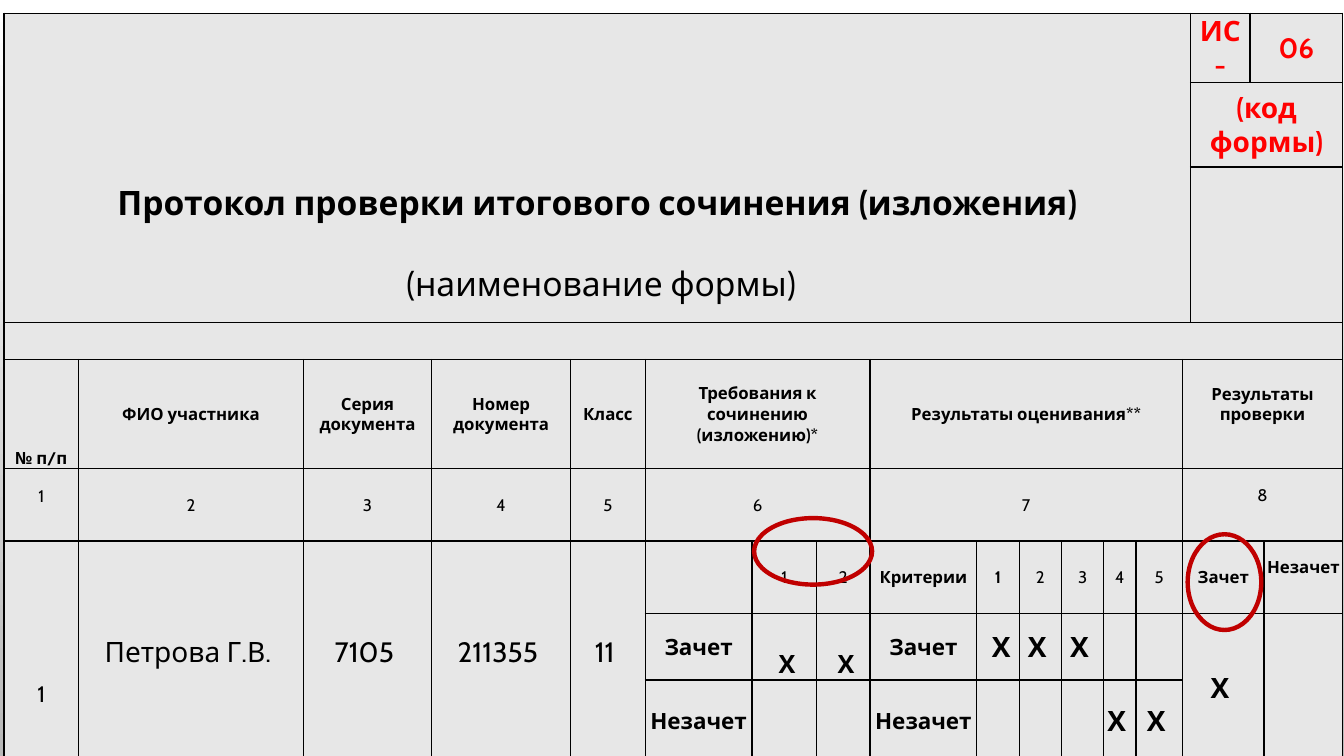
"""Build the essay marking protocol slide."""
from dataclasses import dataclass

from lxml.etree import SubElement
from pptx import Presentation
from pptx.dml.color import RGBColor
from pptx.enum.shapes import MSO_SHAPE
from pptx.enum.text import MSO_ANCHOR, PP_ALIGN
from pptx.oxml.ns import qn
from pptx.slide import Slide
from pptx.table import Table
from pptx.util import Inches, Pt

COLORS = {"text": "000000", "code": "FF0000", "fill": "E7E7E7",
          "ring": "C00000", "light": "FFFFFF", "dark": "B9B9B9"}
FONT = "Cabin"
COLS = [0.74, 2.23, 1.27, 1.38, 0.74, 1.06, 0.64, 0.53, 1.06,
        0.42, 0.42, 0.42, 0.32, 0.46, 0.08, 0.59, 0.14, 0.78]
ROWS = [0.67, 0.84, 1.54, 0.37, 1.08, 0.72, 0.72, 0.66, 0.82]
TOP, MID, LOW = MSO_ANCHOR.TOP, MSO_ANCHOR.MIDDLE, MSO_ANCHOR.BOTTOM


@dataclass
class Entry:
    row: int
    col: int
    text: str = ""
    size: float = 12
    bold: bool = False
    rows: int = 1
    cols: int = 1
    anchor: MSO_ANCHOR = MID
    color: str = "text"
    above: float = 0.01
    below: float = 0


@dataclass
class Ring:
    left: float
    top: float
    width: float
    height: float


HEADS = [(0, 1, "№ п/п"), (1, 1, "ФИО участника"), (2, 1, "Серия документа"),
         (3, 1, "Номер документа"), (4, 1, "Класс"),
         (5, 3, "Требования к сочинению (изложению)*"),
         (8, 6, "Результаты оценивания**"), (14, 4, "Результаты проверки")]
PUPIL = ["Петрова Г.В. ", "7105 ", "211355 ", "11 "]
MARKS = [(7, 9, " Х"), (7, 10, "Х "), (7, 11, "Х "), (8, 12, "Х "), (8, 13, "Х ")]
RINGS = [Ring(7.48, 5.14, 1.17, 0.66), Ring(11.78, 5.3, 0.73, 0.95)]

ENTRIES = [
    Entry(0, 0, "Протокол проверки итогового сочинения (изложения)\n (наименование формы)",
          24, True, 3, 15, LOW, below=0.17),
    Entry(0, 15, "ИС -", 20, True, color="code"),
    Entry(0, 16, "06", 20, True, cols=2, color="code"),
    Entry(1, 15, "(код формы)", 20, True, cols=3, color="code"),
    Entry(2, 15, cols=3),
    Entry(3, 0, cols=18),
    Entry(6, 0, "1", 16, rows=3, anchor=LOW, below=0.54),
    Entry(6, 8, "Критерии", bold=True),
    Entry(6, 14, "Зачет", bold=True, cols=3),
    Entry(6, 17, "Незачет", bold=True, below=0.2),
    Entry(7, 14, "Х ", 20, True, 2, 3),
    Entry(7, 17, rows=2),
]
for num, (col, span, head) in enumerate(HEADS, 1):
    first, last = num == 1, num == len(HEADS)
    gap = 0.2 if last else 0
    ENTRIES += [
        Entry(4, col, head, bold=True, cols=span, anchor=LOW if first else MID, below=gap),
        Entry(5, col, str(num), cols=span, anchor=TOP if first else MID,
              above=0.18 if first else 0.01, below=gap),
    ]
ENTRIES += [Entry(6, col, text, 20, rows=3) for col, text in enumerate(PUPIL, 1)]
ENTRIES += [Entry(6, 5 + num, str(num)) for num in (1, 2)]
ENTRIES += [Entry(6, 8 + num, str(num), bold=num == 1) for num in range(1, 6)]
ENTRIES += [Entry(row, col, text, 16, True)
            for row, text in ((7, "Зачет"), (8, "Незачет")) for col in (5, 8)]
ENTRIES += [Entry(7, col, " Х", 18, True, anchor=LOW) for col in (6, 7)]
ENTRIES += [Entry(row, col, text, 20, True) for row, col, text in MARKS]


def tint(name: str) -> RGBColor:
    return RGBColor.from_string(COLORS[name])


def style(cell) -> None:
    cell.fill.solid()
    cell.fill.fore_color.rgb = tint("fill")
    cell.margin_left = cell.margin_right = cell.margin_top = Inches(0.01)
    cell.margin_bottom = 0
    props = cell._tc.get_or_add_tcPr()
    for spot, side in enumerate(("lnL", "lnR", "lnT", "lnB")):
        line = SubElement(props, qn(f"a:{side}"), w=str(Pt(1)))
        fill = SubElement(line, qn("a:solidFill"))
        SubElement(fill, qn("a:srgbClr"), val=COLORS["text"])
        props.insert(spot, line)


def write(table: Table, entry: Entry) -> None:
    cell = table.cell(entry.row, entry.col)
    if entry.rows * entry.cols > 1:
        cell.merge(table.cell(entry.row + entry.rows - 1, entry.col + entry.cols - 1))
    if not entry.text:
        return
    cell.vertical_anchor = entry.anchor
    cell.margin_top, cell.margin_bottom = Inches(entry.above), Inches(entry.below)
    frame = cell.text_frame
    for num, text in enumerate(entry.text.split("\n")):
        para = frame.add_paragraph() if num else frame.paragraphs[0]
        para.alignment = PP_ALIGN.CENTER
        if num:
            para.space_before = Pt(29)
        run = para.add_run()
        run.text = text
        run.font.name, run.font.size = FONT, Pt(entry.size)
        run.font.bold = entry.bold and not num
        run.font.color.rgb = tint(entry.color)


def draw(slide: Slide, ring: Ring) -> None:
    oval = slide.shapes.add_shape(MSO_SHAPE.OVAL, Inches(ring.left), Inches(ring.top),
                                  Inches(ring.width), Inches(ring.height))
    oval.shadow.inherit = False
    oval.fill.background()
    oval.line.color.rgb = tint("ring")
    oval.line.width = Pt(3.15)


def shade(slide: Slide) -> None:
    fill = slide.background.fill
    fill.gradient()
    fill.gradient_angle = 270
    for stop, spot, name in zip(fill.gradient_stops, (0, 1), ("light", "dark")):
        stop.position = spot
        stop.color.rgb = tint(name)


def main() -> None:
    deck = Presentation()
    deck.slide_width, deck.slide_height = Inches(13.33), Inches(7.5)
    slide = deck.slides.add_slide(deck.slide_layouts[6])
    shade(slide)
    table = slide.shapes.add_table(len(ROWS), len(COLS), Inches(0.04), Inches(0.13),
                                   Inches(sum(COLS)), Inches(sum(ROWS))).table
    table.first_row = table.horz_banding = False
    for col, width in zip(table.columns, COLS):
        col.width = Inches(width)
    for row, height in zip(table.rows, ROWS):
        row.height = Inches(height)
    for cell in table.iter_cells():
        style(cell)
    for entry in ENTRIES:
        write(table, entry)
    for ring in RINGS:
        draw(slide, ring)
    deck.save("out.pptx")


if __name__ == "__main__":
    main()
